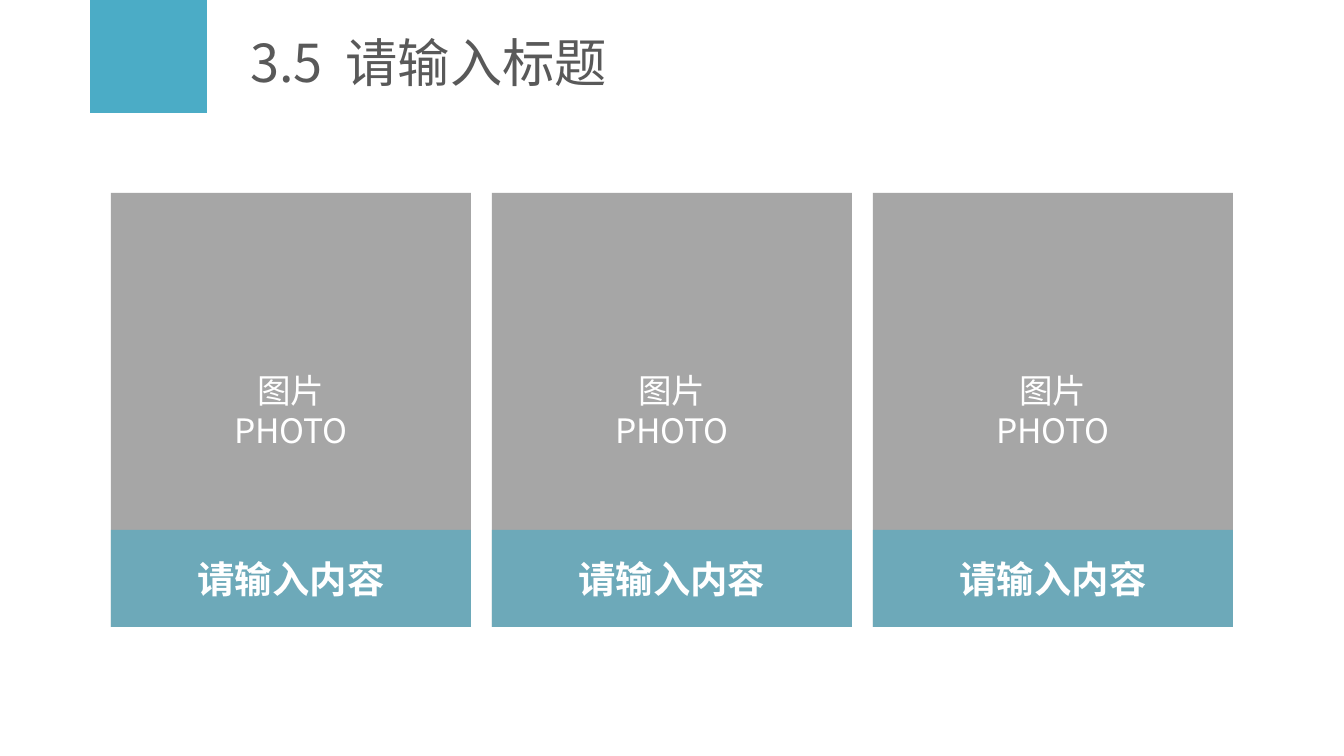
from lxml import etree
from pptx import Presentation
from pptx.dml.color import RGBColor
from pptx.enum.shapes import MSO_SHAPE
from pptx.enum.text import MSO_ANCHOR, MSO_AUTO_SIZE, PP_ALIGN
from pptx.oxml.ns import qn
from pptx.util import Emu, Pt

RECTANGLE = MSO_SHAPE.RECTANGLE
MIDDLE = MSO_ANCHOR.MIDDLE
NO_AUTOFIT = MSO_AUTO_SIZE.NONE
LEFT, CENTER = PP_ALIGN.LEFT, PP_ALIGN.CENTER

EMU_PER_PX = 914400 / 134.4
FONT = "Noto Sans CJK SC"
TEAL = RGBColor(0x4B, 0xAC, 0xC6)
PHOTO_GRAY = RGBColor(0xA6, 0xA6, 0xA6)
TITLE_GRAY = RGBColor(0x59, 0x59, 0x59)
WHITE = RGBColor(0xFF, 0xFF, 0xFF)

CARD_COUNT = 3
CARD_LEFT, CARD_TOP = 111, 193
CARD_WIDTH, CARD_HEIGHT = 360, 434
CARD_PITCH = 381
CAPTION_HEIGHT = 97
CAPTION_OPACITY = 62


def px(length):
    return Emu(round(length * EMU_PER_PX))


def add_run(paragraph, text, size, color, bold=False):
    run = paragraph.add_run()
    run.text = text
    font = run.font
    font.name = FONT
    font.size = Pt(size)
    font.bold = bold
    font.color.rgb = color
    properties = run._r.get_or_add_rPr()
    etree.SubElement(properties, qn("a:ea"), typeface=FONT)
    return run


def add_rectangle(shapes, left, top, width, height, color):
    shape = shapes.add_shape(RECTANGLE, px(left), px(top), px(width), px(height))
    shape.shadow.inherit = False
    shape.fill.solid()
    shape.fill.fore_color.rgb = color
    shape.line.fill.background()
    return shape


def set_opacity(shape, percent):
    color = shape.fill._xPr.find(qn("a:solidFill"))[0]
    etree.SubElement(color, qn("a:alpha"), val=str(percent * 1000))


def write_lines(shape, lines, size, bold=False):
    frame = shape.text_frame
    frame.word_wrap = True
    frame.vertical_anchor = MIDDLE
    for index, line in enumerate(lines):
        paragraph = frame.add_paragraph() if index else frame.paragraphs[0]
        paragraph.alignment = CENTER
        add_run(paragraph, line, size, WHITE, bold)


def set_title(slide, number, text):
    title = slide.shapes.title
    title.left, title.top, title.width, title.height = map(px, (237, 19, 1060, 85))
    frame = title.text_frame
    frame.auto_size = NO_AUTOFIT
    frame.vertical_anchor = MIDDLE
    paragraph = frame.paragraphs[0]
    paragraph.alignment = LEFT
    add_run(paragraph, number, 28, TITLE_GRAY)
    gap = add_run(paragraph, " ", 28, TITLE_GRAY)
    gap._r.get_or_add_rPr().set("spc", "600")
    add_run(paragraph, text, 28, TITLE_GRAY)


def add_card(slide, left):
    shapes = slide.shapes.add_group_shape().shapes
    photo = add_rectangle(shapes, left, CARD_TOP, CARD_WIDTH, CARD_HEIGHT, PHOTO_GRAY)
    write_lines(photo, ["图片", "PHOTO"], 18)
    caption_top = CARD_TOP + CARD_HEIGHT - CAPTION_HEIGHT
    caption = add_rectangle(shapes, left, caption_top, CARD_WIDTH, CAPTION_HEIGHT, TEAL)
    set_opacity(caption, CAPTION_OPACITY)
    frame = caption.text_frame
    frame.margin_left = frame.margin_right = frame.margin_top = frame.margin_bottom = 0
    write_lines(caption, ["请输入内容"], 20, bold=True)


def main():
    presentation = Presentation()
    presentation.slide_width = px(1344)
    presentation.slide_height = px(756)
    slide = presentation.slides.add_slide(presentation.slide_layouts[5])
    add_rectangle(slide.shapes, 90, 0, 117, 113, TEAL)
    set_title(slide, "3.5", "请输入标题")
    for index in range(CARD_COUNT):
        add_card(slide, CARD_LEFT + index * CARD_PITCH)
    presentation.save("out.pptx")


if __name__ == "__main__":
    main()
